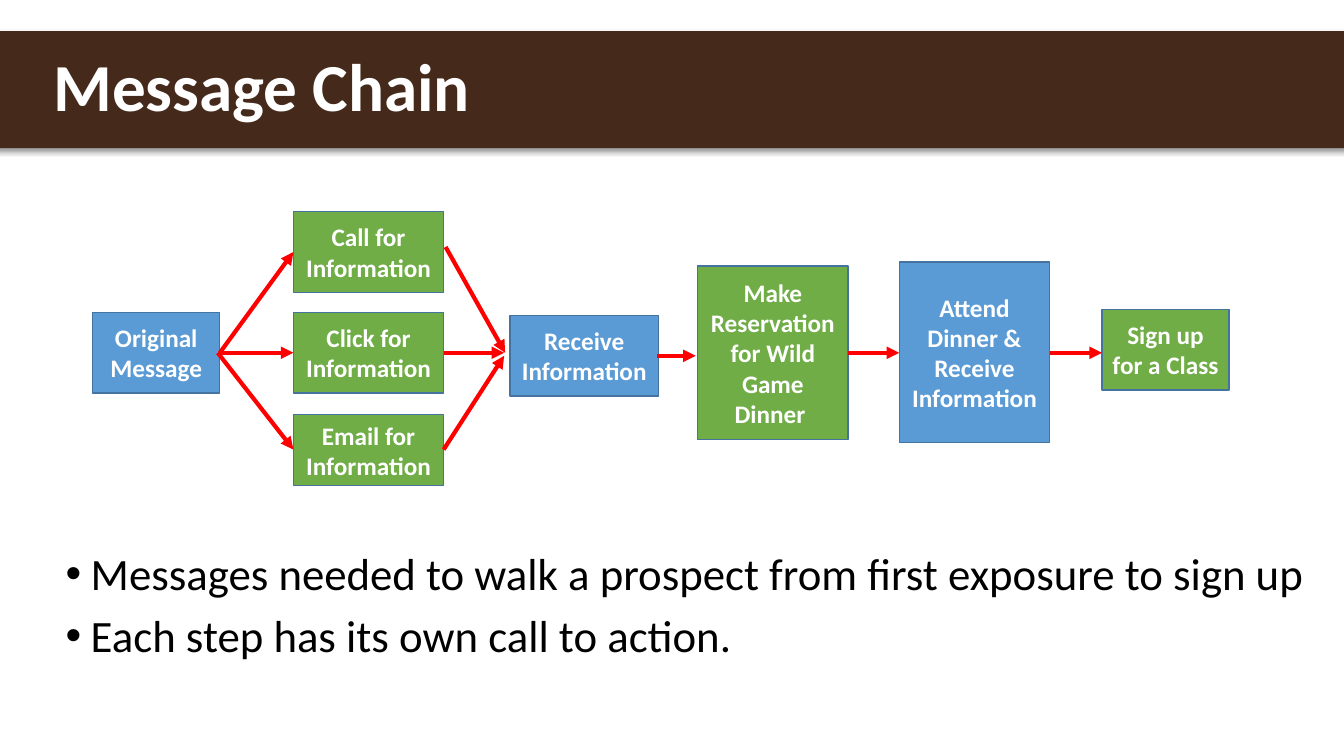
from dataclasses import dataclass

from lxml import etree
from pptx import Presentation
from pptx.dml.color import RGBColor
from pptx.enum import shapes, text
from pptx.oxml import ns, parse_xml
from pptx.util import Inches, Pt


@dataclass(frozen=True)
class Theme:
    font: str = "Calibri"
    banner: RGBColor = RGBColor.from_string("452A1C")
    message: RGBColor = RGBColor.from_string("5B9BD5")
    action: RGBColor = RGBColor.from_string("70AD47")
    outline: RGBColor = RGBColor.from_string("43739E")
    arrow: RGBColor = RGBColor.from_string("FF0000")
    light: RGBColor = RGBColor.from_string("FFFFFF")
    dark: RGBColor = RGBColor.from_string("000000")
    title_size: int = 48
    body_size: int = 32
    step_size: int = 18


theme = Theme()


def style_font(paragraph, size, color, bold):
    for run in paragraph.runs:
        run.font.name = theme.font
        run.font.size = Pt(size)
        run.font.color.rgb = color
        run.font.bold = bold


def place(placeholder, left, top, width, height):
    placeholder.left, placeholder.top = Inches(left), Inches(top)
    placeholder.width, placeholder.height = Inches(width), Inches(height)
    placeholder.text_frame.auto_size = text.MSO_AUTO_SIZE.NONE
    placeholder.text_frame.word_wrap = True


deck = Presentation()
deck.slide_width, deck.slide_height = Inches(13.33), Inches(7.5)
slide = deck.slides.add_slide(deck.slide_layouts[1])

# Title banner with its soft shadow
title = slide.shapes.title
place(title, -0.07, 0.31, 13.4, 1.16)
title.fill.solid()
title.fill.fore_color.rgb = theme.banner
title._element.spPr.append(parse_xml(
    f'<a:effectLst {ns.nsdecls("a")}>'
    f'<a:outerShdw blurRad="{Pt(4)}" dist="{Pt(3)}" dir="2700000" algn="tl" rotWithShape="0">'
    '<a:srgbClr val="000000"><a:alpha val="40000"/></a:srgbClr>'
    '</a:outerShdw></a:effectLst>'))
title.text_frame.text = "Message Chain"
title.text_frame.vertical_anchor = text.MSO_ANCHOR.MIDDLE
heading = title.text_frame.paragraphs[0]
heading.alignment = text.PP_ALIGN.LEFT
heading.line_spacing = 0.9
heading._p.get_or_add_pPr().set("marL", str(Inches(0.5)))
style_font(heading, theme.title_size, theme.light, True)

# Bulleted explanation
explanation = slide.placeholders[1]
place(explanation, 0.55, 5.42, 12.72, 1.79)
explanation.text_frame.text = (
    "Messages needed to walk a prospect from first exposure to sign up\n"
    "Each step has its own call to action.")
for number, point in enumerate(explanation.text_frame.paragraphs):
    properties = point._p.get_or_add_pPr()
    properties.set("marL", str(Inches(0.25)))
    properties.set("indent", str(-Inches(0.25)))
    etree.SubElement(properties, ns.qn("a:buFont"), typeface="Arial")
    etree.SubElement(properties, ns.qn("a:buChar"), char="•")
    point.line_spacing = 0.9
    point.space_before = Pt(10 if number else 0)
    style_font(point, theme.body_size, theme.dark, False)

# Steps of the chain: wording, fill, left, top, width, height
steps = [
    ("Original Message", theme.message, 0.92, 3.1, 1.26, 0.8),
    ("Call for Information", theme.action, 2.91, 2.1, 1.49, 0.8),
    ("Click for Information", theme.action, 2.91, 3.1, 1.49, 0.8),
    ("Email for Information", theme.action, 2.91, 4.11, 1.49, 0.71),
    ("Receive Information", theme.message, 5.06, 3.13, 1.47, 0.8),
    ("Make Reservation for Wild Game Dinner ", theme.action, 6.92, 2.64, 1.49, 1.72),
    ("Attend Dinner & Receive Information ", theme.message, 8.92, 2.6, 1.49, 1.79),
    ("Sign up for a Class", theme.action, 10.93, 3.07, 1.26, 0.8),
]
for wording, fill, *box in steps:
    step = slide.shapes.add_shape(
        shapes.MSO_SHAPE.RECTANGLE, *[Inches(length) for length in box])
    step.shadow.inherit = False
    step.fill.solid()
    step.fill.fore_color.rgb = fill
    step.line.color.rgb = theme.outline
    step.line.width = Pt(1)
    step.text_frame.word_wrap = True
    step.text_frame.vertical_anchor = text.MSO_ANCHOR.MIDDLE
    step.text_frame.text = wording
    label = step.text_frame.paragraphs[0]
    label.alignment = text.PP_ALIGN.CENTER
    style_font(label, theme.step_size, theme.light, True)

# Arrows between steps: start x, start y, end x, end y
arrows = [
    # Original message to the three responses
    (2.18, 3.5, 2.91, 2.5),
    (2.18, 3.5, 2.91, 3.5),
    (2.16, 3.5, 2.91, 4.46),
    # Responses to receiving information
    (4.42, 2.45, 5.01, 3.5),
    (4.4, 3.5, 5, 3.5),
    (4.4, 4.46, 5, 3.53),
    # Onward to the sign-up
    (6.52, 3.53, 6.9, 3.53),
    (8.41, 3.5, 8.92, 3.5),
    (10.41, 3.5, 10.93, 3.5),
]
for ends in arrows:
    arrow = slide.shapes.add_connector(
        shapes.MSO_CONNECTOR.STRAIGHT, *[Inches(length) for length in ends])
    arrow.line.color.rgb = theme.arrow
    arrow.line.width = Pt(3)
    etree.SubElement(arrow.line._get_or_add_ln(), ns.qn("a:tailEnd"), type="triangle")
    etree.SubElement(arrow._element.spPr, ns.qn("a:effectLst"))

deck.save("out.pptx")
